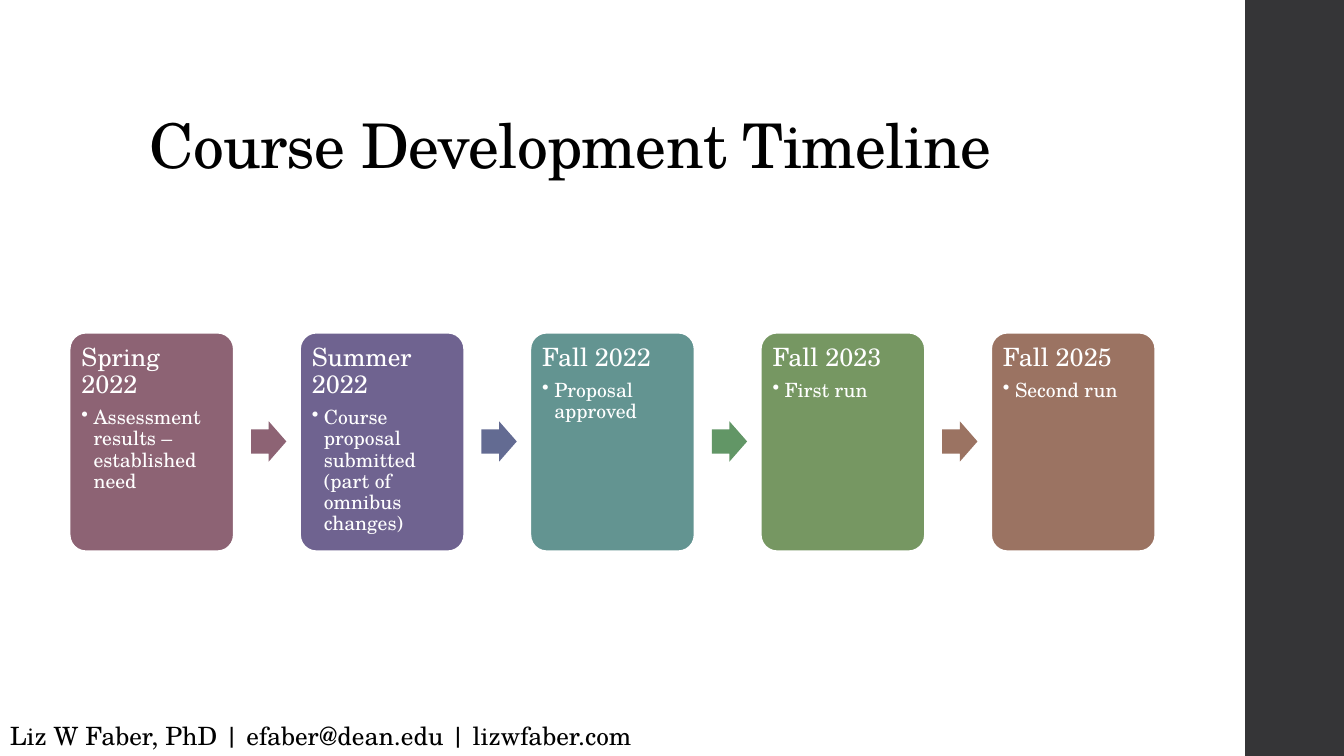
from dataclasses import dataclass

from lxml import etree
from pptx import Presentation
from pptx.dml.color import RGBColor
from pptx.enum.shapes import MSO_SHAPE
from pptx.enum.text import MSO_ANCHOR, PP_ALIGN
from pptx.oxml.ns import qn
from pptx.util import Inches, Pt

RECTANGLE = MSO_SHAPE.RECTANGLE
ROUNDED = MSO_SHAPE.ROUNDED_RECTANGLE
ARROW = MSO_SHAPE.RIGHT_ARROW
TOP, BOTTOM = MSO_ANCHOR.TOP, MSO_ANCHOR.BOTTOM
LEFT = PP_ALIGN.LEFT
TITLE_ONLY = 5


@dataclass(frozen=True)
class Theme:
    font: str = "TeX Gyre Schola"
    ink: str = "000000"
    paper: str = "FFFFFF"
    sidebar: str = "353537"
    title_size: float = 44
    body_size: float = 18
    detail_size: float = 14
    card_line: float = 1.35


THEME = Theme()

# date, what happened, card colour, colour of the arrow to the next card
MILESTONES = [
    ("Spring 2022", "Assessment results – established need", "8D6374", "8D6374"),
    ("Summer 2022", "Course proposal submitted (part of omnibus changes)",
     "6F6390", "636B92"),
    ("Fall 2022", "Proposal approved", "639491", "629666"),
    ("Fall 2023", "First run", "769762", "9B7362"),
    ("Fall 2025", "Second run", "9B7362", None),
]
FIRST_CARD, LAST_CARD = 0.69, 9.83
CARD_TOP, CARD_WIDTH, CARD_HEIGHT = 3.3, 1.63, 2.17
ARROW_OFFSET, ARROW_TOP, ARROW_WIDTH, ARROW_HEIGHT = 1.8, 4.18, 0.35, 0.4
CARD_INSET = Inches(0.07)
BULLET_INDENT = Inches(0.12)


def apply(target, values):
    for name, value in values.items():
        setattr(target, name, value)


def place(shape, left, top, width, height):
    apply(shape, {"left": Inches(left), "top": Inches(top),
                  "width": Inches(width), "height": Inches(height)})


def write(paragraph, text, size, color, **spacing):
    apply(paragraph, {"alignment": LEFT, **spacing})
    run = paragraph.add_run()
    run.text = text
    apply(run.font, {"name": THEME.font, "size": Pt(size)})
    run.font.color.rgb = RGBColor.from_string(color)
    return run


def add_bullet(paragraph):
    properties = paragraph._p.get_or_add_pPr()
    properties.set("marL", str(BULLET_INDENT))
    properties.set("indent", str(-BULLET_INDENT))
    etree.SubElement(properties, qn("a:buChar")).set("char", "•")


def add_block(slide, kind, box, color, adjustments=()):
    """Add a flat preset shape without an outline."""
    block = slide.shapes.add_shape(kind, *(Inches(length) for length in box))
    block.shadow.inherit = False
    block.fill.solid()
    block.fill.fore_color.rgb = RGBColor.from_string(color)
    block.line.fill.background()
    for index, value in enumerate(adjustments):
        block.adjustments[index] = value
    return block


def add_title(slide, text):
    title = slide.shapes.title
    place(title, 1.38, 0.4, 10.6, 1.45)
    apply(title.text_frame, {"vertical_anchor": BOTTOM, "word_wrap": True})
    run = write(title.text_frame.paragraphs[0], text, THEME.title_size,
                THEME.ink, line_spacing=0.9)
    run._r.get_or_add_rPr().set("spc", "-50")


def add_footer(slide, text):
    footer = slide.shapes.add_textbox(
        Inches(0), Inches(7.1), Inches(6.94), Inches(0.4))
    footer.text_frame.word_wrap = True
    write(footer.text_frame.paragraphs[0], text, THEME.body_size, THEME.ink)


def add_card(slide, left, date, event, color):
    card = add_block(slide, ROUNDED, (left, CARD_TOP, CARD_WIDTH, CARD_HEIGHT),
                     color, [0.1])
    card.line.color.rgb = RGBColor.from_string(THEME.paper)
    card.line.width = Pt(THEME.card_line)
    frame = card.text_frame
    apply(frame, {"word_wrap": True, "vertical_anchor": TOP,
                  "margin_left": CARD_INSET, "margin_right": CARD_INSET,
                  "margin_top": CARD_INSET, "margin_bottom": CARD_INSET})
    write(frame.paragraphs[0], date, THEME.body_size, THEME.paper,
          line_spacing=0.9, space_after=Pt(0.35 * THEME.body_size))
    detail = frame.add_paragraph()
    detail.level = 1
    add_bullet(detail)
    write(detail, event, THEME.detail_size, THEME.paper,
          line_spacing=0.9, space_after=Pt(0.15 * THEME.detail_size))


def add_timeline(slide):
    pitch = (LAST_CARD - FIRST_CARD) / (len(MILESTONES) - 1)
    for index, (date, event, color, arrow_color) in enumerate(MILESTONES):
        left = FIRST_CARD + index * pitch
        add_card(slide, left, date, event, color)
        if arrow_color:
            add_block(slide, ARROW,
                      (left + ARROW_OFFSET, ARROW_TOP, ARROW_WIDTH, ARROW_HEIGHT),
                      arrow_color, [0.6, 0.5])


def main():
    deck = Presentation()
    apply(deck, {"slide_width": Inches(13.33), "slide_height": Inches(7.5)})
    slide = deck.slides.add_slide(deck.slide_layouts[TITLE_ONLY])
    add_block(slide, RECTANGLE, (12.35, 0, 0.98, 7.5), THEME.sidebar)
    add_title(slide, "Course Development Timeline")
    add_footer(slide, "Liz W Faber, PhD | efaber@dean.edu | lizwfaber.com")
    add_timeline(slide)
    deck.save("out.pptx")


if __name__ == "__main__":
    main()
